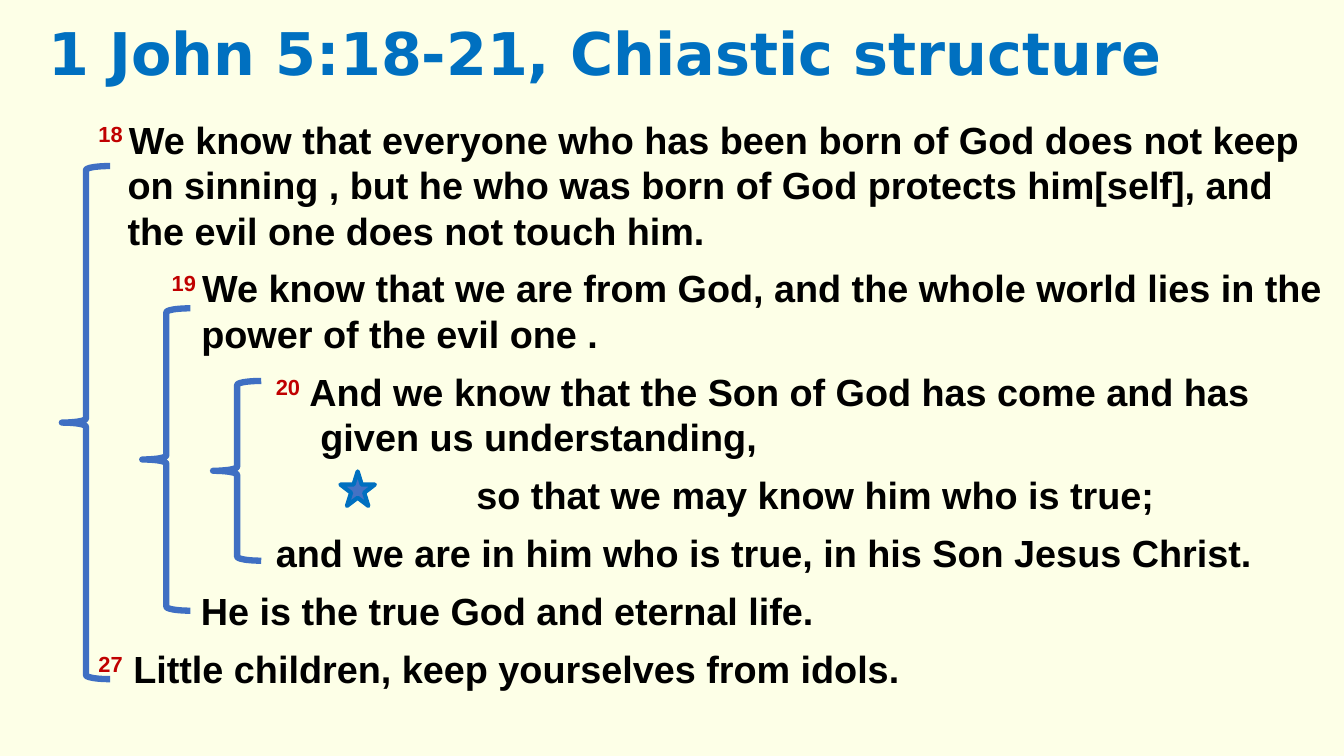
import pptx
import pptx.dml.color
import pptx.enum.shapes
import pptx.enum.text
import pptx.oxml.ns
import pptx.util
from pptx.util import Cm

RGBColor = pptx.dml.color.RGBColor
CREAM = RGBColor(0xFD, 0xFF, 0xE7)
TITLE_BLUE = RGBColor(0x00, 0x70, 0xC0)
BRACE_BLUE = RGBColor(0x3F, 0x6F, 0xC3)
STAR_BLUE = RGBColor(0x44, 0x72, 0xC4)
VERSE_RED = RGBColor(0xC0, 0x00, 0x00)
BLACK = RGBColor(0x00, 0x00, 0x00)

# Verse number, wording, left margin and first-line indent in cm
VERSES = [
    ("18 ", "We know that everyone who has been born of God does not keep "
     "on sinning , but he who was born of God protects him[self], and "
     "the evil one does not touch him.", 0.49, -0.49),
    ("19 ", "We know that we are from God, and the whole world lies in the "
     "power of the evil one .", 1.73, -0.5),
    ("20", " And we know that the Son of God has come and has "
     "given us understanding,", 3.73, -0.75),
    ("", "so that we may know him who is true;", 6.35, 0),
    ("", "and we are in him who is true, in his Son Jesus Christ.", 1.27, 1.71),
    ("", "He is the true God and eternal life.", 1.27, 0.45),
    ("27", " Little children, keep yourselves from idols.", 0, 0),
]

# Left, top and height in cm of the braces joining matching lines
BRACES = [(1.04, 2.79, 8.62), (2.39, 5.18, 5.08), (3.58, 6.4, 3.02)]
BRACE_WIDTH = 0.81


def add_text(paragraph, text, size=18, font="Arial", color=BLACK, superscript=False):
    """Append a bold run with the given format."""
    run = paragraph.add_run()
    run.text = text
    run.font.size = pptx.util.Pt(size)
    run.font.name = font
    run.font.bold = True
    run.font.color.rgb = color
    if superscript:
        run._r.get_or_add_rPr().set("baseline", "30000")


def place_placeholder(placeholder, left, top, width, height):
    """Move a placeholder and give it a plain, top-anchored text frame."""
    placeholder.left, placeholder.top = Cm(left), Cm(top)
    placeholder.width, placeholder.height = Cm(width), Cm(height)
    frame = placeholder.text_frame
    frame.word_wrap = True
    frame.auto_size = pptx.enum.text.MSO_AUTO_SIZE.NONE
    frame.vertical_anchor = pptx.enum.text.MSO_ANCHOR.TOP
    return frame


def format_verse(paragraph, margin, indent):
    """Set indents and spacing, without a bullet."""
    properties = paragraph._p.get_or_add_pPr()
    properties.set("marL", str(Cm(margin)))
    properties.set("indent", str(Cm(indent)))
    properties.append(pptx.oxml.parse_xml(
        "<a:buNone %s/>" % pptx.oxml.ns.nsdecls("a")))
    paragraph.alignment = pptx.enum.text.PP_ALIGN.LEFT
    paragraph.space_before = pptx.util.Pt(0)
    paragraph.space_after = pptx.util.Pt(6)


def add_outlined_shape(slide, kind, box, line_color, line_width, fill=None):
    """Add a preset shape with a line and an optional fill."""
    shape = slide.shapes.add_shape(kind, *(Cm(length) for length in box))
    shape.shadow.inherit = False
    shape.line.color.rgb = line_color
    shape.line.width = pptx.util.Pt(line_width)
    if fill is None:
        shape.fill.background()
    else:
        shape.fill.solid()
        shape.fill.fore_color.rgb = fill


def main():
    presentation = pptx.Presentation()
    presentation.slide_width = Cm(22.58)
    presentation.slide_height = Cm(12.7)
    slide = presentation.slides.add_slide(presentation.slide_layouts[1])
    slide.background.fill.solid()
    slide.background.fill.fore_color.rgb = CREAM

    # Title
    frame = place_placeholder(slide.shapes.title, 0.56, 0.15, 22, 1.45)
    frame.paragraphs[0].alignment = pptx.enum.text.PP_ALIGN.LEFT
    add_text(frame.paragraphs[0], "1 John 5:18-21, Chiastic structure",
             size=28, font="DejaVu Sans", color=TITLE_BLUE)

    # Verses
    frame = place_placeholder(slide.placeholders[1], 1.4, 1.83, 21.16, 10.01)
    for index, (number, wording, margin, indent) in enumerate(VERSES):
        paragraph = frame.add_paragraph() if index else frame.paragraphs[0]
        format_verse(paragraph, margin, indent)
        if number:
            add_text(paragraph, number, color=VERSE_RED, superscript=True)
        add_text(paragraph, wording)

    # Braces and the star at the centre of the structure
    shapes = pptx.enum.shapes.MSO_SHAPE
    for left, top, height in BRACES:
        add_outlined_shape(slide, shapes.LEFT_BRACE,
                           (left, top, BRACE_WIDTH, height), BRACE_BLUE, 3)
    add_outlined_shape(slide, shapes.STAR_5_POINT, (5.72, 7.92, 0.58, 0.58),
                       TITLE_BLUE, 2, fill=STAR_BLUE)

    presentation.save("out.pptx")


if __name__ == "__main__":
    main()
